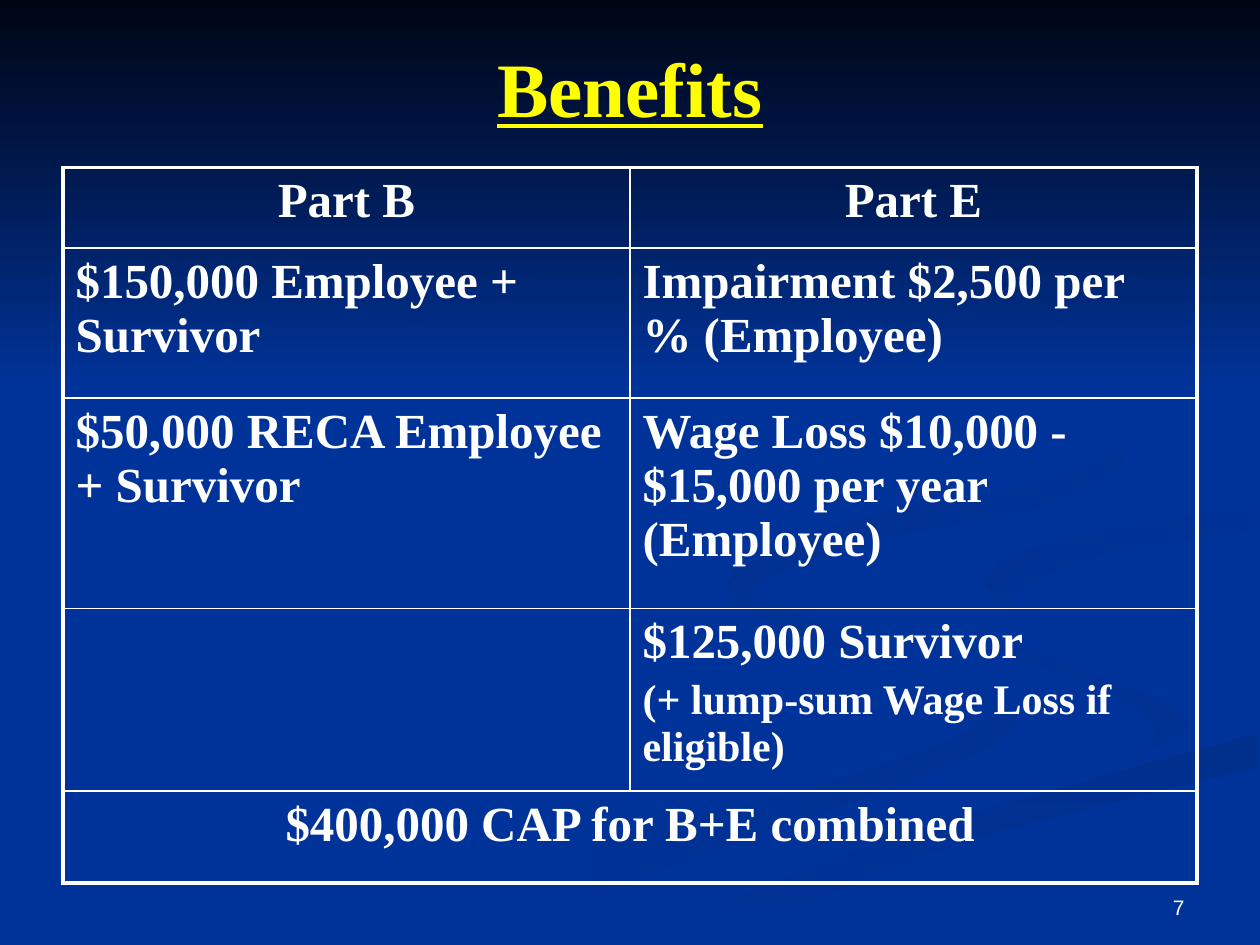
from dataclasses import dataclass

from lxml.etree import SubElement
from pptx import Presentation
from pptx.dml.color import RGBColor
from pptx.enum.shapes import MSO_SHAPE as Preset
from pptx.enum.text import MSO_ANCHOR as Anchor, PP_ALIGN as Align
from pptx.oxml.ns import qn
from pptx.util import Inches, Pt

WHITE = RGBColor(0xFF, 0xFF, 0xFF)
YELLOW = RGBColor(0xFF, 0xFF, 0x00)
BLUE = RGBColor(0x00, 0x33, 0x99)
NIGHT = RGBColor(0x00, 0x05, 0x14)
SHADE = RGBColor(0x00, 0x31, 0x93)
DEEP_SHADE = RGBColor(0x00, 0x2F, 0x8C)
CURL_SHADE = RGBColor(0x00, 0x30, 0x91)
LOOP_SHADE = RGBColor(0x00, 0x2F, 0x8E)

SERIF, SANS = "Times New Roman", "Arial"
WIDTH, HEIGHT = Inches(10), Inches(7.5)
LEFT, CONTENT_WIDTH = int(WIDTH * 0.05), int(WIDTH * 0.9)
ROW_HEIGHTS = (0.64, 1.19, 1.67, 1.45, 0.73)
THICK, THIN = Pt(2.25), Pt(1)
CURVE_STEPS = 6

Point = tuple[float, float]


@dataclass(frozen=True)
class Ribbon:
    """Smooth edges through points in hundredths of an inch."""
    start: RGBColor
    end: RGBColor
    angle: int  # clockwise
    edges: tuple[tuple[Point, ...], ...]


@dataclass(frozen=True)
class Entry:
    """A table cell's text as (wording, size) lines."""
    row: int
    column: int
    lines: tuple[tuple[str, int], ...]
    align: Align = Align.LEFT
    columns: int = 1


RIBBONS = (
    Ribbon(BLUE, SHADE, 0, (
        ((300, 749), (458, 674), (684, 613), (786, 566), (728, 535), (575, 459)),
        ((575, 459), (614, 496), (781, 553), (800, 581), (699, 628), (361, 749)))),
    Ribbon(BLUE, SHADE, 45, (
        ((724, 464), (758, 498), (870, 530), (943, 570), (894, 605)),
        ((894, 605), (918, 581), (868, 544), (755, 505), (724, 464)))),
    Ribbon(DEEP_SHADE, BLUE, 90, (
        ((503, 749), (696, 669), (998, 581)),
        ((998, 609), (752, 672), (571, 749)))),
    Ribbon(BLUE, BLUE, 0, (
        ((477, 749), (663, 668), (881, 608), (943, 570), (831, 519), (725, 464),
         (808, 417), (999, 387)),
        ((999, 402), (850, 427), (781, 463), (848, 503), (999, 538)),
        ((999, 581), (696, 669), (503, 749)))),
    Ribbon(CURL_SHADE, BLUE, 45, (
        ((998, 402), (849, 427), (781, 460), (826, 496)),
        ((826, 496), (805, 472), (878, 439), (998, 420)))),
    Ribbon(LOOP_SHADE, BLUE, 45, (
        ((762, 233), (894, 344), (825, 402), (683, 430), (593, 470), (622, 500)),
        ((622, 500), (577, 462), (676, 414), (842, 378), (889, 335), (762, 233)))),
)

ENTRIES = (
    Entry(0, 0, (("Part B", 28),), Align.CENTER),
    Entry(0, 1, (("Part E", 28),), Align.CENTER),
    Entry(1, 0, (("$150,000 Employee + Survivor", 28),)),
    Entry(1, 1, (("Impairment $2,500 per % (Employee)", 28),)),
    Entry(2, 0, (("$50,000 RECA Employee + Survivor", 28),)),
    Entry(2, 1, (("Wage Loss $10,000 -$15,000 per year (Employee)", 28),)),
    Entry(3, 1, (("$125,000 Survivor", 28),
                 ("(+ lump-sum Wage Loss if eligible)", 24))),
    Entry(4, 0, (("$400,000 CAP for B+E combined", 28),), Align.CENTER, 2),
)


def write(paragraph, text: str, *, size: int, font: str = SERIF,
          color: RGBColor = WHITE, bold: bool = True, underline: bool = False,
          align: Align = Align.LEFT) -> None:
    paragraph.alignment = align
    run = paragraph.add_run()
    run.text = text
    run.font.name, run.font.size = font, Pt(size)
    run.font.bold, run.font.underline = bold, underline
    run.font.color.rgb = color


def smooth(edge: tuple[Point, ...]) -> list[Point]:
    """Return points on a Catmull-Rom curve through the edge."""
    padded = (edge[0], *edge, edge[-1])
    curve = [edge[0]]
    for before, start, end, after in zip(padded, padded[1:], padded[2:], padded[3:]):
        for step in range(1, CURVE_STEPS + 1):
            t = step / CURVE_STEPS
            curve.append(tuple(
                b + t * ((c - a) + t * ((2 * a - 5 * b + 4 * c - d)
                                        + t * (3 * b - a - 3 * c + d))) / 2
                for a, b, c, d in zip(before, start, end, after)))
    return curve


def paint(band, start: RGBColor, end: RGBColor, angle: int) -> None:
    band.shadow.inherit = False
    band.line.fill.background()
    if start == end:
        band.fill.solid()
        band.fill.fore_color.rgb = start
        return
    band.fill.gradient()
    band.fill.gradient_angle = -angle % 360
    for position, (stop, color) in enumerate(zip(band.fill.gradient_stops, (start, end))):
        stop.color.rgb, stop.position = color, position


def draw_ribbon(slide, ribbon: Ribbon) -> None:
    outline = [point for edge in ribbon.edges for point in smooth(edge)]
    builder = slide.shapes.build_freeform(*outline[0], scale=Inches(0.01))
    builder.add_line_segments(outline[1:], close=True)
    paint(builder.convert_to_shape(), ribbon.start, ribbon.end, ribbon.angle)


def rule_cell(cell, **widths: int) -> None:
    """Give the cell white borders; keys are the sides L, R, T and B."""
    properties = cell._tc.get_or_add_tcPr()
    for position, (side, width) in enumerate(widths.items()):
        line = SubElement(properties, qn(f"a:ln{side}"), w=str(int(width)))
        fill = SubElement(line, qn("a:solidFill"))
        SubElement(fill, qn("a:srgbClr"), val=str(WHITE))
        properties.insert(position, line)


def draw_benefits(slide) -> None:
    last_row = len(ROW_HEIGHTS) - 1
    table = slide.shapes.add_table(len(ROW_HEIGHTS), 2, LEFT, Inches(1.33),
                                   CONTENT_WIDTH, Inches(sum(ROW_HEIGHTS))).table
    table.first_row = table.horz_banding = False
    for row, height in enumerate(ROW_HEIGHTS):
        table.rows[row].height = Inches(height)
        for column in range(2):
            cell = table.cell(row, column)
            cell.fill.background()
            rule_cell(cell,
                      L=THIN if column else THICK,
                      R=THICK if column or row == last_row else THIN,
                      T=THIN if row else THICK,
                      B=THICK if row == last_row else THIN)
    for entry in ENTRIES:
        cell = table.cell(entry.row, entry.column)
        if entry.columns > 1:
            cell.merge(table.cell(entry.row, entry.column + entry.columns - 1))
        frame = cell.text_frame
        for number, (text, size) in enumerate(entry.lines):
            paragraph = frame.add_paragraph() if number else frame.paragraphs[0]
            if number:
                paragraph.space_before = Pt(size * 0.2)
            write(paragraph, text, size=size, align=entry.align)


def main() -> None:
    deck = Presentation()
    deck.slide_width, deck.slide_height = WIDTH, HEIGHT
    slide = deck.slides.add_slide(deck.slide_layouts[5])
    slide.background.fill.solid()
    slide.background.fill.fore_color.rgb = BLUE
    for ribbon in RIBBONS:
        draw_ribbon(slide, ribbon)
    sky = slide.shapes.add_shape(Preset.RECTANGLE, 0, 0, WIDTH, Inches(3.08))
    paint(sky, NIGHT, BLUE, 90)

    page = slide.shapes.add_textbox(Inches(7.17), Inches(6.83),
                                    Inches(2.33), Inches(0.52)).text_frame
    page.word_wrap = True
    page.vertical_anchor = Anchor.BOTTOM
    write(page.paragraphs[0], "7", size=12, font=SANS, bold=False, align=Align.RIGHT)

    title = slide.shapes.title
    slide.shapes.element.append(title.element)  # in front of the ribbons
    title.left, title.top = LEFT, int(HEIGHT * 0.04)
    title.width, title.height = CONTENT_WIDTH, Inches(0.78)
    title.text_frame.vertical_anchor = Anchor.MIDDLE
    write(title.text_frame.paragraphs[0], "Benefits", size=44, color=YELLOW,
          underline=True, align=Align.CENTER)

    draw_benefits(slide)
    deck.save("out.pptx")


if __name__ == "__main__":
    main()
